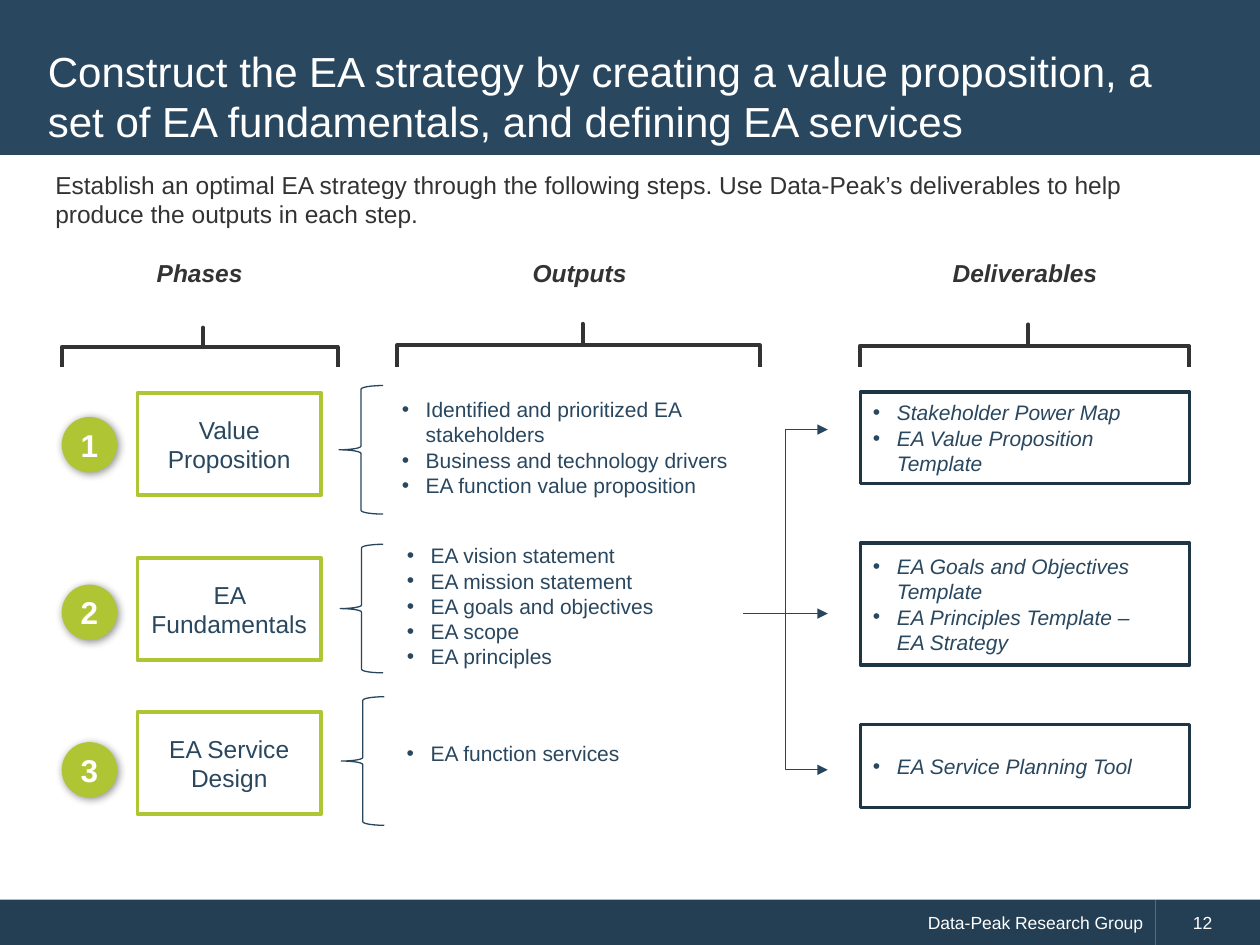
from dataclasses import dataclass
from typing import Any, Optional

import lxml.etree
import pptx
import pptx.dml.color
import pptx.enum.shapes
import pptx.enum.text
import pptx.oxml.ns
import pptx.util

Inches = pptx.util.Inches
Pt = pptx.util.Pt
RGBColor = pptx.dml.color.RGBColor
Kind = pptx.enum.shapes.MSO_SHAPE
Link = pptx.enum.shapes.MSO_CONNECTOR
Align = pptx.enum.text.PP_ALIGN
Anchor = pptx.enum.text.MSO_ANCHOR
qn = pptx.oxml.ns.qn

WHITE = RGBColor(0xFF, 0xFF, 0xFF)
BLACK = RGBColor(0x00, 0x00, 0x00)
GREY = RGBColor(0x33, 0x33, 0x33)
GREEN = RGBColor(0xB0, 0xC5, 0x34)
BLUE = RGBColor(0x29, 0x47, 0x5F)
WIRE = RGBColor(0x27, 0x46, 0x5E)
DEEP = RGBColor(0x24, 0x3F, 0x54)
EDGE = RGBColor(0x1E, 0x35, 0x46)

Area = tuple[float, float, float, float]


@dataclass
class Head:
    label: str
    left: float
    width: float
    brace: Area


@dataclass
class Phase:
    label: str
    top: float
    disc: float
    brace: Area
    list_area: Area
    outputs: list[str]
    goal_top: float
    goal_height: float
    goals: list[str]


HEADS = [
    Head("Phases", 0.56, 2.05, (1.43, 1.66, 0.31, 2.19)),
    Head("Outputs", 3.16, 2.88, (4.42, 1.3, 0.34, 2.88)),
    Head("Deliverables", 6.83, 2.61, (7.96, 1.44, 0.34, 2.61)),
]

PHASES = [
    Phase("Value Proposition", 3.12, 3.31, (2.69, 3.06, 0.35, 1.02),
          (3.09, 3.1, 2.95, 0.91),
          ["Identified and prioritized EA stakeholders",
           "Business and technology drivers",
           "EA function value proposition"],
          3.11, 0.73,
          ["Stakeholder Power Map", "EA Value Proposition Template"]),
    Phase("EA Fundamentals", 4.43, 4.64, (2.7, 4.32, 0.34, 1.02),
          (3.13, 4.26, 2.29, 1.11),
          ["EA vision statement", "EA mission statement",
           "EA goals and objectives", "EA scope", "EA principles"],
          4.31, 0.97,
          ["EA Goals and Objectives Template",
           "EA Principles Template –\vEA Strategy"]),
    Phase("EA Service Design", 5.65, 5.89, (2.71, 5.53, 0.34, 1.02),
          (3.13, 5.83, 2.13, 0.5),
          ["EA function services"],
          5.75, 0.66,
          ["EA Service Planning Tool"]),
]


def write(shape: Any, *lines: str, size: float, color: RGBColor,
          bold: bool = False, italic: bool = False, align: Any = Align.LEFT,
          anchor: Any = Anchor.MIDDLE, bullet: bool = False,
          indent: float = 0, before: float = 0,
          inset: Optional[float] = None) -> None:
    frame = shape.text_frame
    frame.word_wrap = True
    frame.auto_size = pptx.enum.text.MSO_AUTO_SIZE.NONE
    frame.vertical_anchor = anchor
    if inset is not None:
        frame.margin_left = frame.margin_right = Inches(inset)
        frame.margin_top = frame.margin_bottom = Inches(inset)
    for i, line in enumerate(lines):
        para = frame.add_paragraph() if i else frame.paragraphs[0]
        para.text = line
        para.alignment = align
        para.space_before = Pt(before)
        props = para._p.get_or_add_pPr()
        props.set("marL", str(Inches(0.19 if bullet else indent)))
        if bullet:
            props.set("indent", str(-Inches(0.19)))
            lxml.etree.SubElement(props, qn("a:buFont"), typeface="Arial")
            lxml.etree.SubElement(props, qn("a:buChar"), char="•")
        for run in para.runs:
            run.font.name = "Arial"
            run.font.size = Pt(size)
            run.font.bold = bold
            run.font.italic = italic
            run.font.color.rgb = color


def draw(slide: Any, kind: Any, area: Area, fill: Optional[RGBColor] = None,
         line: Optional[RGBColor] = None, width: float = 2) -> Any:
    shape = slide.shapes.add_shape(kind, *map(Inches, area))
    if fill is None:
        shape.fill.background()
    else:
        shape.fill.solid()
        shape.fill.fore_color.rgb = fill
    if line is None:
        shape.line.fill.background()
    else:
        shape.line.color.rgb = line
        shape.line.width = Pt(width)
    shape.shadow.inherit = False
    return shape


def label(slide: Any, area: Area, *lines: str, **style: Any) -> None:
    box = slide.shapes.add_textbox(*map(Inches, area))
    write(box, *lines, anchor=Anchor.TOP, **style)


def shade(shape: Any) -> None:
    effects = shape._element.spPr.find(qn("a:effectLst"))
    outer = lxml.etree.SubElement(
        effects, qn("a:outerShdw"), blurRad=str(Pt(5)), dist=str(Pt(1.4)),
        dir="2700000", algn="tl", rotWithShape="0")
    tint = lxml.etree.SubElement(outer, qn("a:srgbClr"), val=str(BLACK))
    lxml.etree.SubElement(tint, qn("a:alpha"), val="45000")


def arrow(slide: Any, kind: Any, start: tuple[float, float],
          end: tuple[float, float]) -> None:
    link = slide.shapes.add_connector(kind, *map(Inches, start + end))
    link.line.color.rgb = WIRE
    link.line.width = Pt(0.75)
    lxml.etree.SubElement(link.line._get_or_add_ln(), qn("a:tailEnd"),
                          type="triangle")
    lxml.etree.SubElement(link._element.spPr, qn("a:effectLst"))


def draw_head(slide: Any, head: Head) -> None:
    brace = draw(slide, Kind.LEFT_BRACE, head.brace, line=GREY, width=2.25)
    brace.rotation = 90
    brace.adjustments[0] = 0
    brace.adjustments[1] = 0.488
    label(slide, (head.left, 2, head.width, 0.34), head.label, size=14,
          color=GREY, bold=True, italic=True, align=Align.CENTER)


def draw_phase(slide: Any, num: int, phase: Phase) -> None:
    box = draw(slide, Kind.RECTANGLE, (1.09, phase.top, 1.46, 0.81),
               WHITE, GREEN)
    write(box, phase.label, size=14, color=BLUE, align=Align.CENTER)
    draw(slide, Kind.LEFT_BRACE, phase.brace, line=WIRE, width=0.75)
    label(slide, phase.list_area, *phase.outputs, size=12, color=BLUE,
          bullet=True)
    disc = draw(slide, Kind.OVAL, (0.49, phase.disc, 0.44, 0.44), GREEN)
    shade(disc)
    write(disc, str(num), size=18, color=WHITE, bold=True,
          align=Align.CENTER, inset=0)
    goal = draw(slide, Kind.RECTANGLE,
                (6.83, phase.goal_top, 2.61, phase.goal_height), WHITE, EDGE)
    write(goal, *phase.goals, size=12, color=BLUE, italic=True, bullet=True)


def main() -> None:
    deck = pptx.Presentation()
    deck.slide_width = Inches(10)
    deck.slide_height = Inches(7.5)
    slide = deck.slides.add_slide(deck.slide_layouts[5])

    foot = draw(slide, Kind.RECTANGLE, (0, 7.14, 9.17, 0.37), DEEP)
    write(foot, "Data-Peak Research Group", size=10, color=WHITE,
          align=Align.RIGHT)
    page = draw(slide, Kind.RECTANGLE, (9.17, 7.14, 0.83, 0.37), DEEP)
    write(page, "12", size=10, color=WHITE, indent=0.2)

    band = draw(slide, Kind.RECTANGLE, (0, 0, 10, 1.23), BLUE)
    title = slide.shapes.title
    title.left, title.top = Inches(0.28), Inches(0.28)
    title.width, title.height = Inches(9.43), Inches(0.96)
    write(title, "Construct the EA strategy by creating a value proposition, "
          "a set of EA fundamentals, and defining EA services",
          size=24, color=WHITE)
    band._element.addnext(title._element)

    label(slide, (0.34, 1.3, 9.35, 0.59),
          "Establish an optimal EA strategy through the following steps. "
          "Use Data-Peak’s deliverables to help produce the outputs in "
          "each step.", size=14, color=GREY, before=5)

    for num, phase in enumerate(PHASES, 1):
        draw_phase(slide, num, phase)
    for head in HEADS:
        draw_head(slide, head)
    for end in (3.41, 6.11):
        arrow(slide, Link.ELBOW, (5.9, 4.87), (6.57, end))
    arrow(slide, Link.STRAIGHT, (6.24, 4.87), (6.57, 4.87))

    deck.save("out.pptx")


if __name__ == "__main__":
    main()
